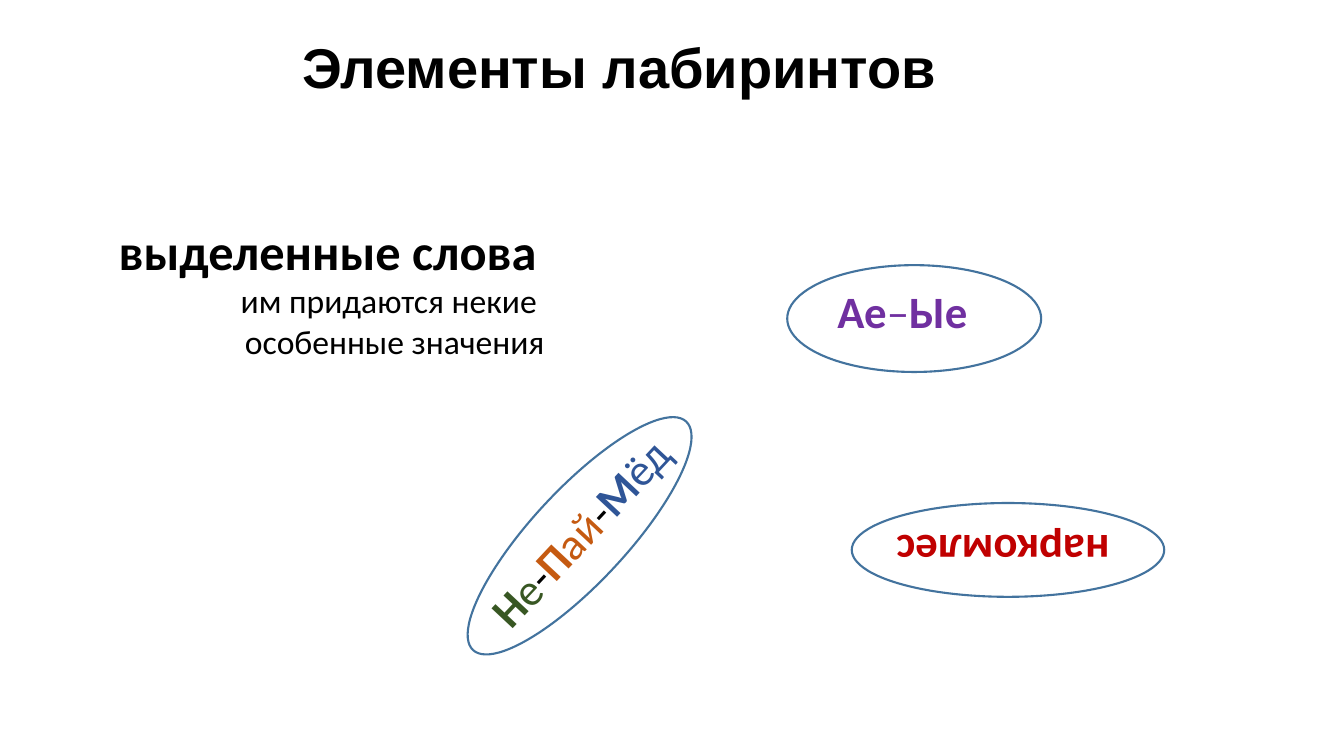
from pptx import Presentation
from pptx.dml.color import RGBColor
from pptx.enum.shapes import MSO_SHAPE as SHAPE
from pptx.enum.text import MSO_ANCHOR as ANCHOR, PP_ALIGN as ALIGN
from pptx.util import Pt

BLACK = RGBColor(0x00, 0x00, 0x00)
OUTLINE = RGBColor(0x43, 0x73, 0x9E)
PURPLE = RGBColor(0x70, 0x30, 0xA0)
GREEN = RGBColor(0x38, 0x57, 0x23)
ORANGE = RGBColor(0xC5, 0x5A, 0x11)
BLUE = RGBColor(0x2F, 0x55, 0x97)
RED = RGBColor(0xC0, 0x00, 0x00)


def add_run(p, text, size, color=BLACK, bold=False, font="Calibri"):
    r = p.add_run()
    r.text = text
    r.font.name = font
    r.font.size = Pt(size)
    r.font.bold = bold
    r.font.color.rgb = color


def add_text_frame(shapes, box, wrap=True, rotation=0):
    sp = shapes.add_textbox(*map(Pt, box))
    sp.rotation = rotation
    tf = sp.text_frame
    tf.word_wrap = wrap
    return tf


def add_title(slide, box):
    tf = add_text_frame(slide.shapes, box)
    tf.vertical_anchor = ANCHOR.MIDDLE
    p = tf.paragraphs[0]
    p.alignment = ALIGN.CENTER
    p.line_spacing = 0.9
    add_run(p, "Элементы лабиринтов", 40, bold=True, font="Arial")


def add_description(slide, box):
    tf = add_text_frame(slide.shapes, box)
    lines = [
        [("выделенные слова", 36, BLACK, True), (" ", 24)],
        [("им придаются некие ", 24)],
        [("особенные значения", 24)],
    ]
    for i, runs in enumerate(lines):
        p = tf.add_paragraph() if i else tf.paragraphs[0]
        p.alignment = ALIGN.RIGHT
        for run in runs:
            add_run(p, *run)


def add_word_oval(slide, box, label, runs, rotation=0, align=ALIGN.LEFT):
    left, top, width, height = box
    dx, dy, label_width = label
    group = slide.shapes.add_group_shape()
    sp = group.shapes.add_shape(SHAPE.OVAL, Pt(left), Pt(top), Pt(width), Pt(height))
    sp.shadow.inherit = False
    sp.fill.background()
    sp.line.color.rgb = OUTLINE
    sp.line.width = Pt(1.5)
    sp.rotation = rotation
    tf = add_text_frame(group.shapes, (left + dx, top + dy, label_width, 46), rotation=rotation)
    p = tf.paragraphs[0]
    p.alignment = align
    for text, color, bold in runs:
        add_run(p, text, 32, color, bold)


def main():
    prs = Presentation()
    prs.slide_width, prs.slide_height = Pt(960), Pt(540)
    slide = prs.slides.add_slide(prs.slide_layouts[6])
    add_title(slide, (201, 22.3, 482.4, 56.2))
    add_description(slide, (37.4, 153.4, 358.6, 125.3))
    add_word_oval(slide, (562.3, 189.4, 181.4, 76.3), (28.8, 10, 126.7), [
        ("Ае", PURPLE, True), ("–", PURPLE, False), ("Ые", PURPLE, True),
    ])
    add_word_oval(slide, (302.4, 349.2, 223.2, 67), (19.4, 6.5, 187.2), [
        ("Н", GREEN, True), ("е", GREEN, False), ("-", BLACK, False),
        ("П", ORANGE, True), ("ай", ORANGE, False), ("-", BLACK, False),
        ("М", BLUE, True), ("ёд", BLUE, False),
    ], rotation=313)
    add_word_oval(slide, (608.4, 359.3, 223.2, 67), (14.4, 12.9, 187.2), [
        ("наркомлес", RED, True),
    ], rotation=180, align=ALIGN.CENTER)
    prs.save("out.pptx")


if __name__ == "__main__":
    main()
